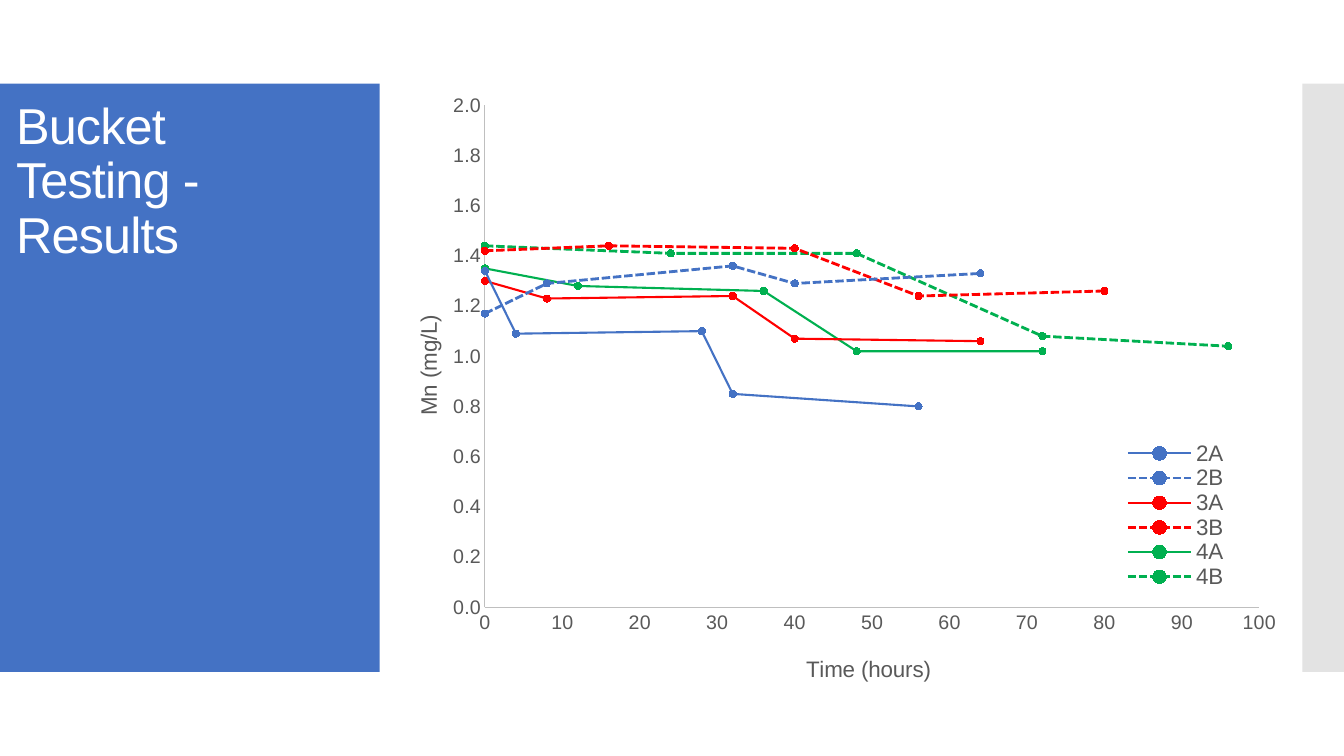
import lxml.etree
import pptx
import pptx.chart.data
import pptx.dml.color
import pptx.enum.chart
import pptx.enum.dml
import pptx.enum.shapes
import pptx.enum.text
import pptx.oxml.ns
import pptx.util

Cm = pptx.util.Cm
Pt = pptx.util.Pt
qn = pptx.oxml.ns.qn
RGBColor = pptx.dml.color.RGBColor

BLUE = RGBColor(0x44, 0x72, 0xC4)
RED = RGBColor(0xFF, 0x00, 0x00)
GREEN = RGBColor(0x00, 0xB0, 0x50)
WHITE = RGBColor(0xFF, 0xFF, 0xFF)
PALE_GREY = RGBColor(0xE3, 0xE3, 0xE3)
AXIS_GREY = RGBColor(0xBF, 0xBF, 0xBF)
TEXT_GREY = RGBColor(0x59, 0x59, 0x59)
FONT = "Arial"

BAND_TOP, BAND_HEIGHT = Cm(2.11), Cm(14.82)

# Name, colour, dashed, hours, manganese in mg/L
BUCKETS = [
    ("2A", BLUE, False, (0, 4, 28, 32, 56), (1.34, 1.09, 1.1, 0.85, 0.8)),
    ("2B", BLUE, True, (0, 8, 32, 40, 64), (1.17, 1.29, 1.36, 1.29, 1.33)),
    ("3A", RED, False, (0, 8, 32, 40, 64), (1.3, 1.23, 1.24, 1.07, 1.06)),
    ("3B", RED, True, (0, 16, 40, 56, 80), (1.42, 1.44, 1.43, 1.24, 1.26)),
    ("4A", GREEN, False, (0, 12, 36, 48, 72), (1.35, 1.28, 1.26, 1.02, 1.02)),
    ("4B", GREEN, True, (0, 24, 48, 72, 96), (1.44, 1.41, 1.41, 1.08, 1.04)),
]


def format_font(font, size, color):
    font.name = FONT
    font.size = Pt(size)
    font.bold = False
    font.color.rgb = color


def write_text(text_frame, text, size=16, color=TEXT_GREY, line_spacing=None, spacing=None):
    """Fill the frame with one formatted run; spacing is in points between letters."""
    paragraph = text_frame.paragraphs[0]
    paragraph.line_spacing = line_spacing
    run = paragraph.add_run()
    run.text = text
    format_font(run.font, size, color)
    if spacing is not None:
        run._r.get_or_add_rPr().set("spc", str(round(spacing * 100)))


def add_band(slide, left, width, color):
    band = slide.shapes.add_shape(
        pptx.enum.shapes.MSO_SHAPE.RECTANGLE, left, BAND_TOP, width, BAND_HEIGHT)
    band.shadow.inherit = False
    band.fill.solid()
    band.fill.fore_color.rgb = color
    band.line.fill.background()


def place_title(slide, text):
    title = slide.shapes.title
    title.left, title.top, title.width, title.height = Cm(0.15), Cm(2.41), Cm(8.18), Cm(12.78)
    frame = title.text_frame
    frame.word_wrap = True
    frame.auto_size = pptx.enum.text.MSO_AUTO_SIZE.NONE
    frame.vertical_anchor = pptx.enum.text.MSO_ANCHOR.TOP
    write_text(frame, text, size=36, color=WHITE, line_spacing=0.9, spacing=-0.6)
    frame.paragraphs[0].alignment = pptx.enum.text.PP_ALIGN.LEFT
    title._element.getparent().append(title._element)  # in front of the bands


def set_layout(element, index, inner=False, **fractions):
    """Place a chart part by fractions of the chart area."""
    for old_layout in element.findall(qn("c:layout")):
        element.remove(old_layout)
    layout = lxml.etree.Element(qn("c:layout"))
    manual = lxml.etree.SubElement(layout, qn("c:manualLayout"))
    settings = [("layoutTarget", "inner")] if inner else []
    settings += [("xMode", "edge"), ("yMode", "edge"), *fractions.items()]
    for name, value in settings:
        lxml.etree.SubElement(manual, qn(f"c:{name}")).set("val", str(value))
    element.insert(index, layout)


def format_axis(axis, title, maximum, step, number_format, x, y):
    axis.minimum_scale, axis.maximum_scale, axis.major_unit = 0, maximum, step
    axis.has_major_gridlines = False
    axis.major_tick_mark = axis.minor_tick_mark = pptx.enum.chart.XL_TICK_MARK.NONE
    axis.format.line.color.rgb = AXIS_GREY
    axis.format.line.width = Pt(0.75)
    axis.tick_labels.number_format = number_format
    axis.tick_labels.number_format_is_linked = False
    format_font(axis.tick_labels.font, 14, TEXT_GREY)
    write_text(axis.axis_title.text_frame, title)
    set_layout(axis.axis_title._element, 1, x=x, y=y)


def format_series(series, color, dashed):
    series.smooth = False
    line = series.format.line
    line.color.rgb = color
    line.width = Pt(2 if dashed else 1.5)
    if dashed:
        line.dash_style = pptx.enum.dml.MSO_LINE.SQUARE_DOT
    marker = series.marker
    marker.style = pptx.enum.chart.XL_MARKER_STYLE.CIRCLE
    marker.size = 5
    marker.format.fill.solid()
    marker.format.fill.fore_color.rgb = color
    marker.format.line.color.rgb = color


def add_manganese_chart(slide):
    data = pptx.chart.data.XyChartData()
    for name, _, _, hours, levels in BUCKETS:
        series = data.add_series(name)
        for hour, level in zip(hours, levels):
            series.add_data_point(hour, level)
    chart = slide.shapes.add_chart(
        pptx.enum.chart.XL_CHART_TYPE.XY_SCATTER_LINES,
        Cm(9.65), Cm(2.06), Cm(22.96), Cm(15.6), data).chart
    chart.has_title = False
    format_font(chart.font, 10, TEXT_GREY)
    chart.plots[0].vary_by_categories = False
    for series, (_, color, dashed, _, _) in zip(chart.plots[0].series, BUCKETS):
        format_series(series, color, dashed)

    format_axis(chart.category_axis, "Time (hours)", 100, 10, "0", x=0.46, y=0.92)
    format_axis(chart.value_axis, "Mn (mg/L)", 2, 0.2, "0.0", x=0.03, y=0.37)
    value_title = chart.value_axis.axis_title.text_frame
    value_title._txBody.bodyPr.set("rot", "-5400000")
    value_title._txBody.bodyPr.set("vert", "horz")

    chart.has_legend = True
    chart.legend.position = pptx.enum.chart.XL_LEGEND_POSITION.RIGHT
    chart.legend.include_in_layout = True
    format_font(chart.legend.font, 16, TEXT_GREY)
    set_layout(chart.legend._element, 1, x=0.81, y=0.58, w=0.12, h=0.24)
    plot_area = chart._chartSpace.find(".//" + qn("c:plotArea"))
    set_layout(plot_area, 0, inner=True, x=0.112, y=0.038, w=0.85, h=0.811)


def main():
    presentation = pptx.Presentation()
    presentation.slide_width, presentation.slide_height = Cm(33.87), Cm(19.05)
    slide = presentation.slides.add_slide(presentation.slide_layouts[5])
    add_band(slide, 0, Cm(9.57), BLUE)
    add_band(slide, Cm(32.82), Cm(1.05), PALE_GREY)
    place_title(slide, "Bucket Testing - Results")
    add_manganese_chart(slide)
    presentation.save("out.pptx")


if __name__ == "__main__":
    main()
